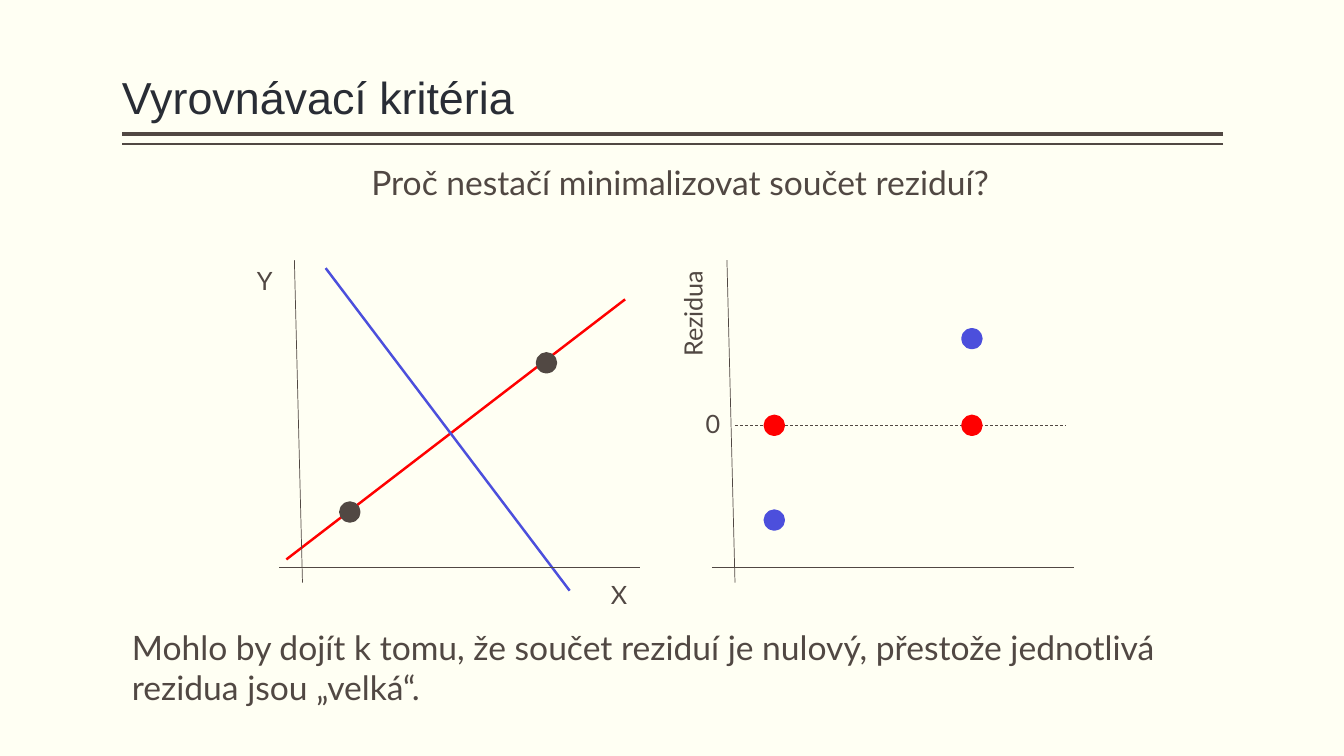
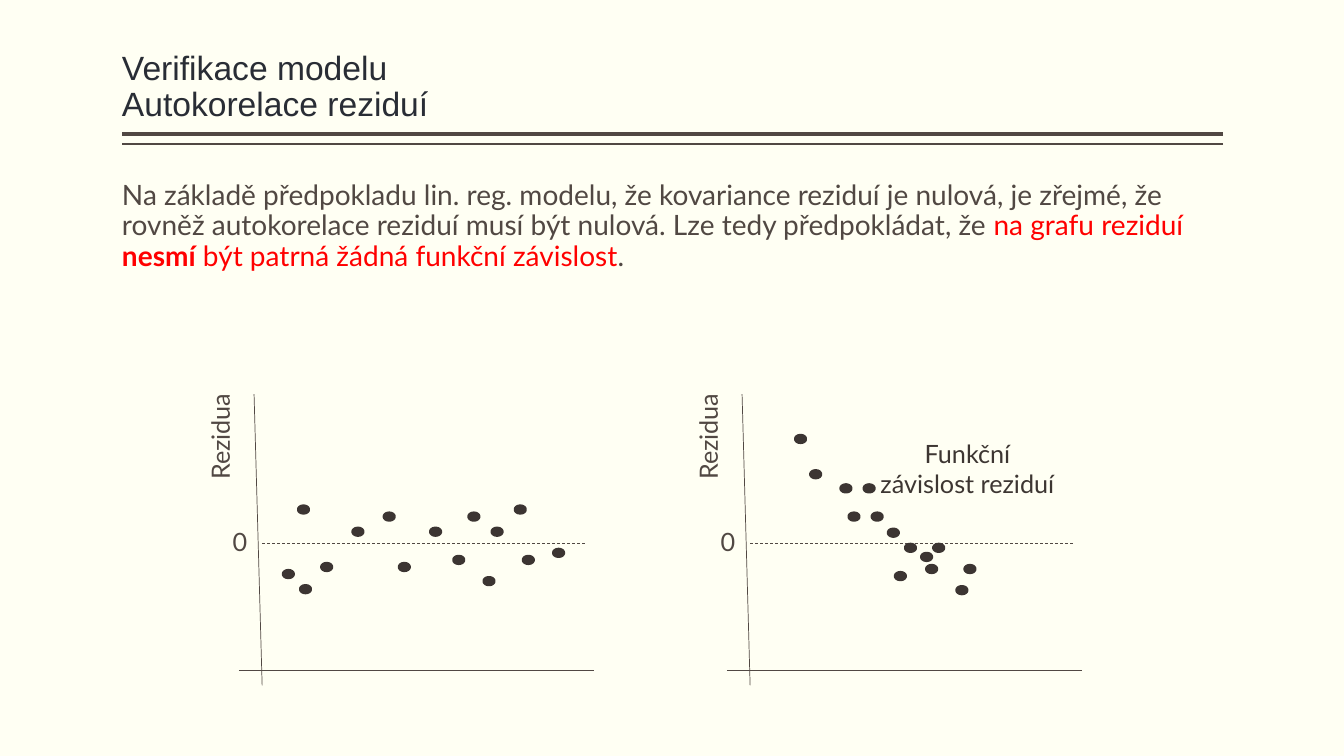
from dataclasses import dataclass

from pptx import Presentation
from pptx.dml.color import RGBColor
from pptx.enum.dml import MSO_LINE as Dash
from pptx.enum.shapes import MSO_CONNECTOR as Link, MSO_SHAPE as Form
from pptx.enum.text import MSO_ANCHOR as Anchor, PP_ALIGN as Align
from pptx.oxml.ns import qn
from pptx.slide import Slide
from pptx.util import Inches, Pt

# Shared look
PAPER, INK, DARK, EDGE = "FFFFF3", "514843", "292D35", "3C3532"
RED, BLUE = "FF0000", "4C4FDC"
LEFT, RIGHT, WIDE = 1.21, 12.13, 10.92
Box = tuple[float, float, float, float]
Point = tuple[float, float]


@dataclass
class Run:
    words: str
    color: str = INK
    bold: bool = False


@dataclass
class Plot:
    x: float
    top: float
    high: float
    reach: float  # right end of the base line, from x
    zero: float | None = None
    tag: float = 0  # top of the turned label


@dataclass
class Dots:
    spots: list[Point]  # left top corners
    wide: float
    high: float
    fill: str
    edge: str


def paint(code: str) -> RGBColor:
    return RGBColor.from_string(code)


def text(slide: Slide, box: Box, words: str | list[Run], *, size: float = 18,
         font: str = "Lato", color: str = INK, align: Align = Align.LEFT,
         anchor: Anchor = Anchor.TOP, side: float = 0.1,
         space: float = 1.0, turned: bool = False) -> None:
    shape = slide.shapes.add_textbox(*map(Inches, box))
    frame = shape.text_frame
    frame.word_wrap = True
    frame.vertical_anchor = anchor
    frame.margin_left = frame.margin_right = Inches(side)
    if turned:
        shape.element.txBody.bodyPr.set("vert", "vert270")
    para = frame.paragraphs[0]
    para.alignment, para.line_spacing = align, space
    for part in [Run(words, color)] if isinstance(words, str) else words:
        for i, line in enumerate(part.words.split("\n")):
            if i:
                para.add_line_break()
            run = para.add_run()
            run.text = line
            run.font.name, run.font.size = font, Pt(size)
            run.font.bold = part.bold
            run.font.color.rgb = paint(part.color)


def rule(slide: Slide, start: Point, end: Point, color: str = INK,
         width: float = 0.5, dash: bool = False) -> None:
    line = slide.shapes.add_connector(
        Link.STRAIGHT, *map(Inches, (*start, *end)))
    line.line.color.rgb = paint(color)
    line.line.width = Pt(width)
    if dash:
        line.line.dash_style = Dash.DASH
    props = line.element.spPr
    props.append(props.makeelement(qn("a:effectLst"), {}))


def scatter(slide: Slide, dots: Dots) -> None:
    for x, y in dots.spots:
        dot = slide.shapes.add_shape(
            Form.OVAL, *map(Inches, (x, y, dots.wide, dots.high)))
        dot.shadow.inherit = False
        dot.fill.solid()
        dot.fill.fore_color.rgb = paint(dots.fill)
        dot.line.color.rgb = paint(dots.edge)
        dot.line.width = Pt(3.78)


def axes(slide: Slide, plot: Plot) -> None:
    x, end = plot.x, plot.top + plot.high
    rule(slide, (x, plot.top), (x + 0.08, end))
    rule(slide, (x - 0.15, end - 0.15), (x + plot.reach, end - 0.15))
    if plot.zero is not None:
        rule(slide, (x + 0.08, plot.zero),
             (x + plot.reach - 0.08, plot.zero), dash=True)
        text(slide, (x - 0.31, plot.zero - 0.22, 0.31, 0.4), "0")
        text(slide, (x - 0.54, plot.tag, 0.5, 1.06), "Rezidua", turned=True)


def page(deck: Presentation, title: str, size: float) -> Slide:
    slide = deck.slides.add_slide(deck.slide_layouts[6])
    slide.background.fill.solid()
    slide.background.fill.fore_color.rgb = paint(PAPER)
    for y, width in ((1.33, 3), (1.43, 1)):
        rule(slide, (RIGHT, y), (LEFT, y), width=width)
    text(slide, (LEFT, 0.08, WIDE, 1.2), title, size=size, font="Arial",
         color=DARK, anchor=Anchor.BOTTOM, side=0, space=0.9)
    return slide


def fitting(deck: Presentation) -> None:
    slide = page(deck, "Vyrovnávací kritéria", 32)
    text(slide, (3.15, 1.56, 7.19, 0.91),
         "Proč nestačí minimalizovat součet reziduí?",
         size=24, align=Align.CENTER)

    # Two lines through the same data, and their residuals
    rule(slide, (2.84, 5.55), (6.2, 2.97), RED, 1.75)
    rule(slide, (5.65, 5.86), (3.23, 2.66), BLUE, 1.75)
    axes(slide, Plot(2.92, 2.58, 3.2, 3.43))
    axes(slide, Plot(7.21, 2.58, 3.2, 3.44, 4.22, 2.58))
    for name, x, y in (("X", 5.96, 5.7), ("Y", 2.45, 2.58)):
        text(slide, (x, y, 0.55, 0.4), name)
    for color, spots in ((INK, [(5.34, 3.52), (3.39, 5)]),
                         (RED, [(7.6, 4.14), (9.56, 4.14)]),
                         (BLUE, [(7.6, 5.08), (9.56, 3.28)])):
        scatter(slide, Dots(spots, 0.16, 0.16, color, color))

    text(slide, (LEFT, 6.17, 10.76, 0.91),
         "Mohlo by dojít k tomu, že součet reziduí je nulový, přestože "
         "jednotlivá rezidua jsou „velká“.", size=24)


def checking(deck: Presentation) -> None:
    slide = page(deck, "Verifikace modelu\nAutokorelace reziduí", 24)
    text(slide, (LEFT, 1.75, WIDE, 1.2), [
        Run("Na základě předpokladu lin. reg. modelu, že kovariance reziduí "
            "je nulová, je zřejmé, že rovněž autokorelace reziduí musí být "
            "nulová. Lze tedy předpokládat, že "),
        Run("na grafu reziduí ", RED),
        Run("nesmí", RED, True),
        Run(" být patrná žádná funkční závislost", RED),
        Run("."),
    ], size=20, side=0, space=0.9)

    # Random residuals beside dependent ones
    random = [(2.82, 5.67), (2.97, 5.03), (3.2, 5.6), (3.51, 5.25),
              (3.82, 5.1), (3.97, 5.6), (4.28, 5.25), (4.51, 5.53),
              (4.66, 5.1), (4.89, 5.25), (4.81, 5.74), (2.99, 5.82),
              (5.12, 5.03), (5.2, 5.53), (5.5, 5.46)]
    trend = [(7.9, 4.33), (8.05, 4.68), (8.35, 4.82), (8.43, 5.1),
             (8.66, 5.1), (8.82, 5.26), (8.99, 5.41), (8.89, 5.69),
             (9.27, 5.41), (9.2, 5.62), (9.5, 5.83), (8.58, 4.82),
             (9.15, 5.5), (9.58, 5.62)]
    for x, spots in ((2.52, random), (7.36, trend)):
        axes(slide, Plot(x, 3.91, 2.89, 3.37, 5.39, 3.8))
        scatter(slide, Dots(spots, 0.08, 0.05, INK, EDGE))
    text(slide, (8.62, 4.3, 1.95, 1.01), "Funkční závislost reziduí",
         color="3D3632", align=Align.CENTER)


def main() -> None:
    deck = Presentation()
    deck.slide_width, deck.slide_height = Inches(13.33), Inches(7.5)
    fitting(deck)
    checking(deck)
    deck.save("out.pptx")


if __name__ == "__main__":
    main()
